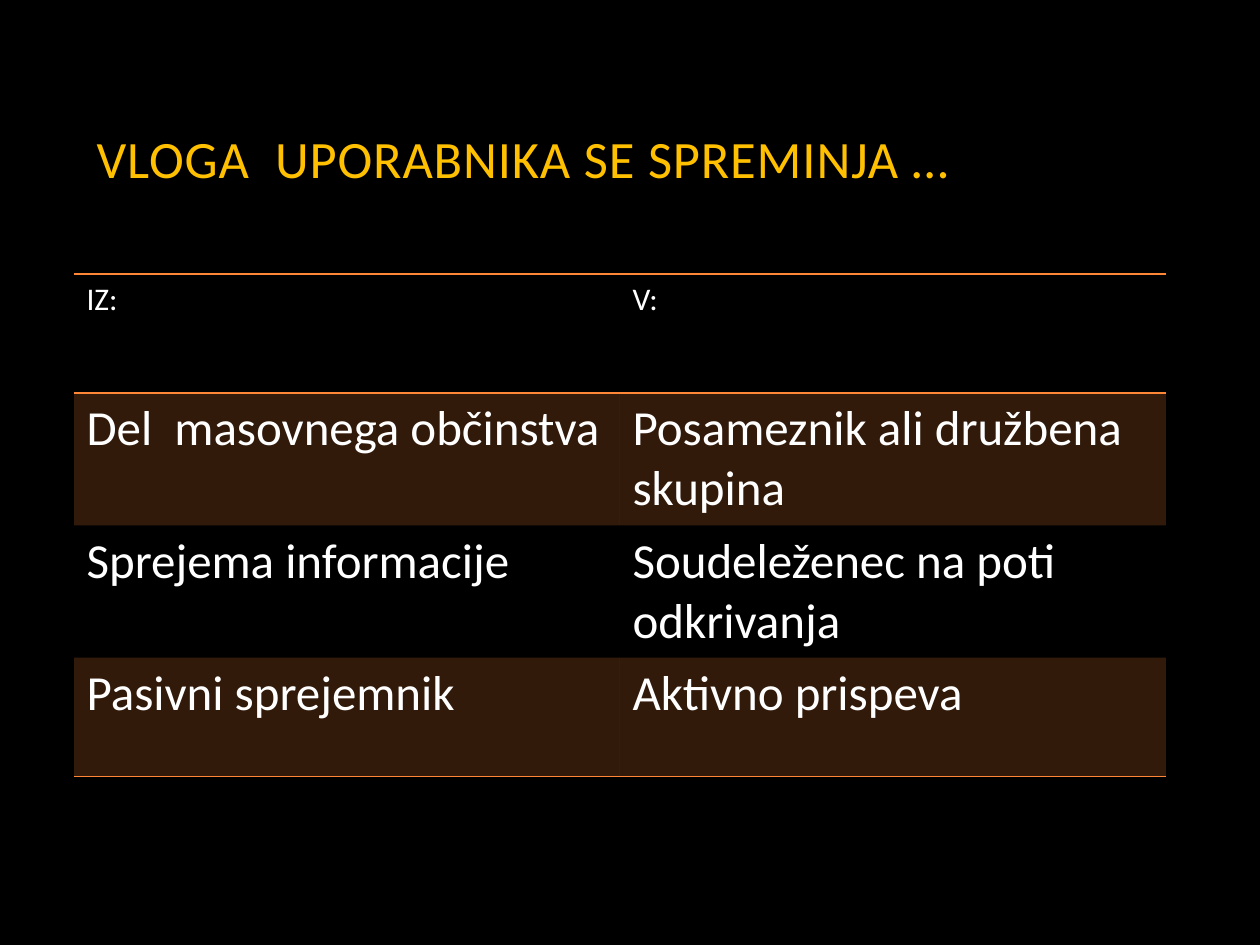
from lxml import etree
from pptx import Presentation
from pptx import util as u
from pptx.dml.color import RGBColor
from pptx.enum import text
from pptx.oxml import ns

HUES = {"back": "000000", "title": "FFC000", "body": "FFFFFF", "line": "FE8637"}
PLAIN = "{2D5ABB26-0587-4C30-8999-92F81FD0307C}"
ROWS = [
    ("IZ:", "V:"),
    ("Del  masovnega občinstva", "Posameznik ali družbena skupina"),
    ("Sprejema informacije", "Soudeleženec na poti odkrivanja"),
    ("Pasivni sprejemnik", "Aktivno prispeva"),
]


def px(num):
    return u.Emu(round(num * 914400 / 126))


def hue(name):
    return RGBColor.from_string(HUES[name])


def write(frame, words, size=28, color="body", gap=0):
    para = frame.paragraphs[0]
    para.alignment = text.PP_ALIGN.LEFT
    run = para.add_run()
    run.text = words
    run.font.name = "Calibri"
    run.font.size = u.Pt(size)
    run.font.color.rgb = hue(color)
    if gap:
        run.font._element.set("spc", str(gap))


def edge(cell, side):
    props = cell._tc.get_or_add_tcPr()
    line = etree.SubElement(props, ns.qn(f"a:ln{side}"), w=str(u.Pt(1)))
    fill = etree.SubElement(line, ns.qn("a:solidFill"))
    etree.SubElement(fill, ns.qn("a:srgbClr"), val=HUES["line"])


def tint(cell, alpha):
    cell.fill.solid()
    cell.fill.fore_color.rgb = hue("line")
    color = cell._tc.tcPr.find(f"{ns.qn('a:solidFill')}/{ns.qn('a:srgbClr')}")
    etree.SubElement(color, ns.qn("a:alpha"), val=str(alpha * 1000))


class Deck:
    """Holds the deck, its style and the current slide."""

    def __init__(self):
        self.show = Presentation()
        self.show.slide_width, self.show.slide_height = px(1260), px(945)
        self.slide = self.show.slides.add_slide(self.show.slide_layouts[5])
        back = self.slide.background.fill
        back.solid()
        back.fore_color.rgb = hue("back")

    def title(self, words, x, y, w, h):
        box = self.slide.shapes.title
        box.left, box.top, box.width, box.height = map(px, (x, y, w, h))
        box.text_frame.vertical_anchor = text.MSO_ANCHOR.BOTTOM
        write(box.text_frame, words, size=30, color="title", gap=50)

    def table(self, rows, x, y, w, high):
        frame = self.slide.shapes.add_table(
            len(rows), len(rows[0]), px(x), px(y), px(w), px(high * len(rows)))
        grid = frame.table
        grid.first_row = grid.horz_banding = False
        grid._tbl.tblPr.find(ns.qn("a:tableStyleId")).text = PLAIN
        for i, row in enumerate(rows):
            grid.rows[i].height = px(high)
            for j, words in enumerate(row):
                cell = grid.cell(i, j)
                write(cell.text_frame, words, size=28 if i else 18)
                if i == 0:
                    edge(cell, "T")
                if i in (0, len(rows) - 1):
                    edge(cell, "B")
                if i % 2:
                    tint(cell, 20)
                else:
                    cell.fill.background()


def main():
    deck = Deck()
    deck.title("VLOGA  UPORABNIKA SE SPREMINJA …", 84, 38, 1092, 157)
    deck.table(ROWS, 74, 274, 1092, 119)
    deck.show.save("out.pptx")


if __name__ == "__main__":
    main()
